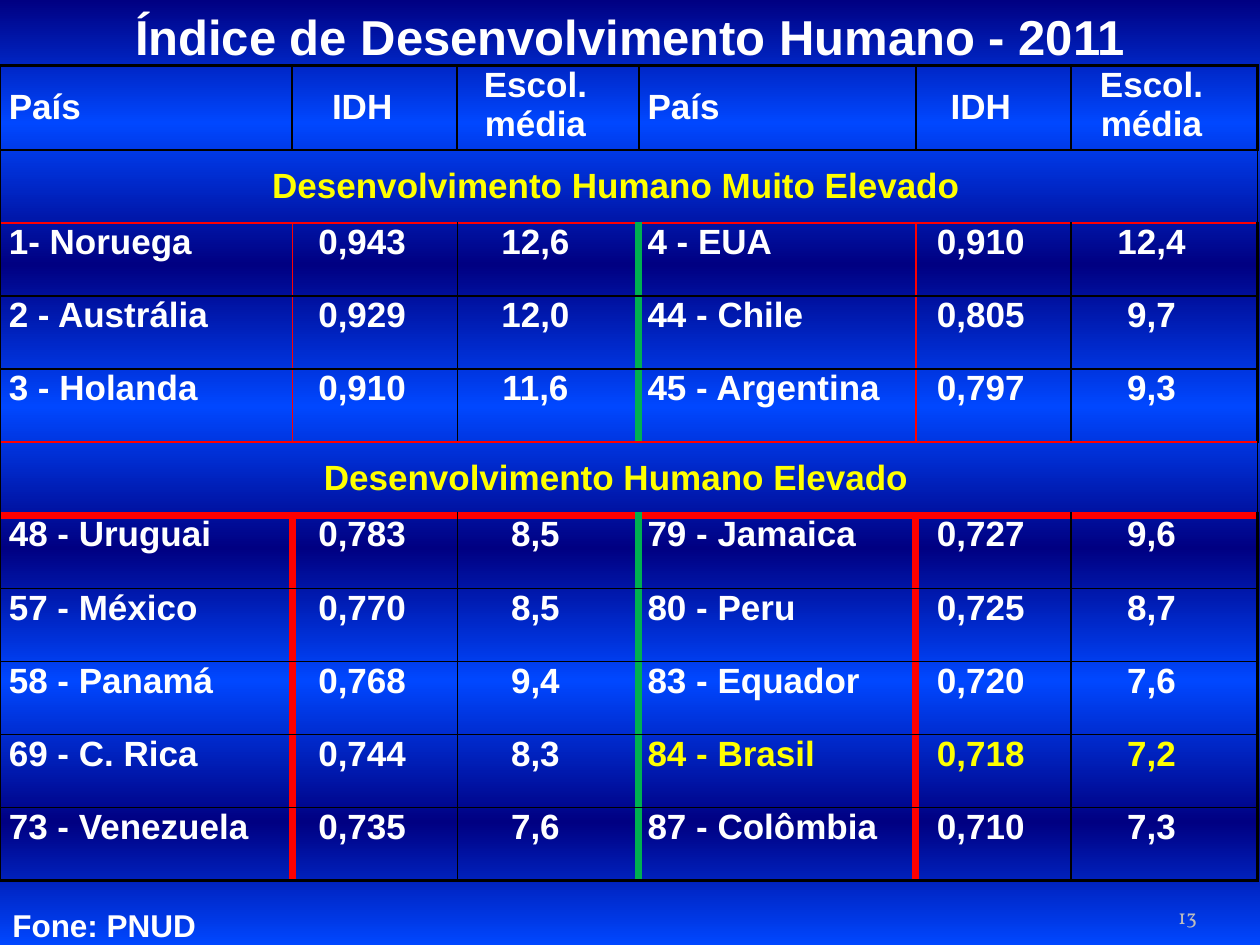
from dataclasses import dataclass

from pptx import Presentation
from pptx.dml.color import RGBColor
from pptx.enum.text import MSO_ANCHOR, MSO_AUTO_SIZE, PP_ALIGN
from pptx.oxml import parse_xml
from pptx.oxml.ns import nsdecls, qn
from pptx.util import Inches, Pt

TOP, MIDDLE, BOTTOM = MSO_ANCHOR.TOP, MSO_ANCHOR.MIDDLE, MSO_ANCHOR.BOTTOM
LEFT, CENTER, RIGHT, JUSTIFY = (
    PP_ALIGN.LEFT, PP_ALIGN.CENTER, PP_ALIGN.RIGHT, PP_ALIGN.JUSTIFY)
NO_AUTOFIT = MSO_AUTO_SIZE.NONE
TITLE_ONLY_LAYOUT = 5


@dataclass(frozen=True)
class Theme:
    font: str = "Arial"
    number_font: str = "Vollkorn"
    white: str = "FFFFFF"
    yellow: str = "FFFF00"
    black: str = "000000"
    red: str = "FF0000"
    green: str = "00B050"
    gray: str = "BDBDBD"
    dark_blue: str = "000082"
    bright_blue: str = "0047FF"
    title_size: int = 28
    table_size: int = 20
    source_size: int = 18
    number_size: int = 12


THEME = Theme()
GRADIENT_STOPS = (0, 13, 28, 43, 58, 72, 87, 100)
COLUMN_WIDTHS = (2.32, 1.31, 1.44, 2.2, 1.23, 1.48)
HEADER_HEIGHT, ROW_HEIGHT = 0.67, 0.58
CELL_MARGIN = Inches(0.07)
CENTERED_RIGHT_INDENT = Inches(0.2)
THIN, MEDIUM, THICK = 1, 1.5, 4.5
NAME_COLUMNS = (0, 3)
HIGHLIGHT = "84 - Brasil"

HEADERS = ("País", "IDH", "Escol. média") * 2
# Each section: heading, width of its red rules, rows
SECTIONS = (
    ("Desenvolvimento Humano Muito Elevado", THIN, (
        ("1- Noruega", "0,943", "12,6", "4 - EUA", "0,910", "12,4"),
        ("2 - Austrália", "0,929", "12,0", "44 - Chile", "0,805", "9,7"),
        ("3 - Holanda", "0,910", "11,6", "45 - Argentina", "0,797", "9,3"),
    )),
    ("Desenvolvimento Humano Elevado", THICK, (
        ("48 - Uruguai", "0,783", "8,5", "79 - Jamaica", "0,727", "9,6"),
        ("57 - México", "0,770", "8,5", "80 - Peru", "0,725", "8,7"),
        ("58 - Panamá", "0,768", "9,4", "83 - Equador", "0,720", "7,6"),
        ("69 - C. Rica", "0,744", "8,3", HIGHLIGHT, "0,718", "7,2"),
        ("73 - Venezuela", "0,735", "7,6", "87 - Colômbia", "0,710", "7,3"),
    )),
)


def write_text(text_frame, text, size=THEME.table_size, color=THEME.white,
               font=THEME.font, bold=True, align=LEFT):
    paragraph = text_frame.paragraphs[0]
    paragraph.alignment = align
    run = paragraph.add_run()
    run.text = text
    run.font.size = Pt(size)
    run.font.name = font
    run.font.bold = bold
    run.font.color.rgb = RGBColor.from_string(color)
    return paragraph


def set_borders(cell, **borders):
    """Draw cell borders; each is a (color, width) pair keyed L, R, T or B."""
    properties = cell._tc.get_or_add_tcPr()
    for position, side in enumerate("LRTB"):
        color, width = borders[side]
        properties.insert(position, parse_xml(
            f'<a:ln{side} {nsdecls("a")} w="{Pt(width)}"><a:solidFill>'
            f'<a:srgbClr val="{color}"/></a:solidFill></a:ln{side}>'))


def fill_cell(cell, text, align, anchor, color=THEME.white):
    cell.vertical_anchor = anchor
    paragraph = write_text(cell.text_frame, text, color=color, align=align)
    if align == CENTER:
        paragraph._p.get_or_add_pPr().set("marR", str(CENTERED_RIGHT_INDENT))


def add_background(slide):
    fill = slide.background.fill
    fill.gradient()
    fill.gradient_angle = 270
    stops = slide.element.find(".//" + qn("a:gsLst"))
    for stop in list(stops):
        stops.remove(stop)
    for index, position in enumerate(GRADIENT_STOPS):
        color = THEME.bright_blue if index % 2 else THEME.dark_blue
        stops.append(parse_xml(
            f'<a:gs {nsdecls("a")} pos="{position * 1000}">'
            f'<a:srgbClr val="{color}"/></a:gs>'))


def place(shape, left, top, width, height):
    shape.left, shape.top = Inches(left), Inches(top)
    shape.width, shape.height = Inches(width), Inches(height)


def add_title(slide, box):
    title = slide.shapes.title
    place(title, *box)
    title.text_frame.auto_size = NO_AUTOFIT
    title.text_frame.vertical_anchor = TOP
    write_text(title.text_frame, "Índice de Desenvolvimento Humano - 2011",
               size=THEME.title_size, align=CENTER)


def add_label(slide, box, text, anchor=TOP, side_margin=0.1, **text_format):
    text_box = slide.shapes.add_textbox(*map(Inches, box))
    frame = text_box.text_frame
    frame.word_wrap = True
    frame.vertical_anchor = anchor
    frame.margin_left = frame.margin_right = Inches(side_margin)
    write_text(frame, text, **text_format)


def add_ranking_table(slide, box):
    row_count = 1 + sum(1 + len(rows) for _, _, rows in SECTIONS)
    table = slide.shapes.add_table(
        row_count, len(COLUMN_WIDTHS), *map(Inches, box)).table
    table.first_row = table.horz_banding = False
    for column, width in zip(table.columns, COLUMN_WIDTHS):
        column.width = Inches(width)
    for index, row in enumerate(table.rows):
        row.height = Inches(ROW_HEIGHT if index else HEADER_HEIGHT)
    for cell in table.iter_cells():
        cell.fill.background()
        cell.margin_left = cell.margin_right = CELL_MARGIN
        cell.margin_top = cell.margin_bottom = 0

    black_thin, outline = (THEME.black, THIN), (THEME.black, MEDIUM)

    # Header row
    for column, text in enumerate(HEADERS):
        cell = table.cell(0, column)
        two_lines = column % 3 == 2
        fill_cell(cell, text, LEFT if column in NAME_COLUMNS else CENTER,
                  TOP if two_lines else MIDDLE)
        set_borders(cell, L=outline, R=outline, T=outline, B=outline)

    row_index, above = 1, outline
    for heading, red_width, rows in SECTIONS:
        # Section heading across all columns
        red = (THEME.red, red_width)
        last_column = len(COLUMN_WIDTHS) - 1
        for column in range(len(COLUMN_WIDTHS)):
            set_borders(table.cell(row_index, column),
                        L=black_thin, R=black_thin, T=above, B=red)
        band = table.cell(row_index, 0)
        band.merge(table.cell(row_index, last_column))
        fill_cell(band, heading, CENTER, MIDDLE, THEME.yellow)
        row_index, above = row_index + 1, red

        # Country rows
        verticals = (outline, red, black_thin, (THEME.green, THICK),
                     red, black_thin, outline)
        for row in rows:
            below = black_thin
            if row is rows[-1]:
                is_table_end = row_index == row_count - 1
                below = outline if is_table_end else (THEME.red, THIN)
            for column, text in enumerate(row):
                cell = table.cell(row_index, column)
                highlighted = column >= 3 and row[3] == HIGHLIGHT
                fill_cell(cell, text,
                          JUSTIFY if column in NAME_COLUMNS else CENTER, TOP,
                          THEME.yellow if highlighted else THEME.white)
                set_borders(cell, L=verticals[column],
                            R=verticals[column + 1], T=above, B=below)
            row_index, above = row_index + 1, below


def main():
    presentation = Presentation()
    presentation.slide_width, presentation.slide_height = Inches(10), Inches(7.5)
    slide = presentation.slides.add_slide(
        presentation.slide_layouts[TITLE_ONLY_LAYOUT])
    add_background(slide)
    add_label(slide, (8.67, 7.02, 0.83, 0.4), "13", anchor=BOTTOM,
              side_margin=0, size=THEME.number_size, color=THEME.gray,
              font=THEME.number_font, bold=False, align=RIGHT)
    add_ranking_table(slide, (0, 0.52, 10, 6.48))
    add_title(slide, (0, 0, 10, 0.57))
    add_label(slide, (0, 7.14, 5, 0.4), "Fone: PNUD", size=THEME.source_size)
    presentation.save("out.pptx")


if __name__ == "__main__":
    main()
